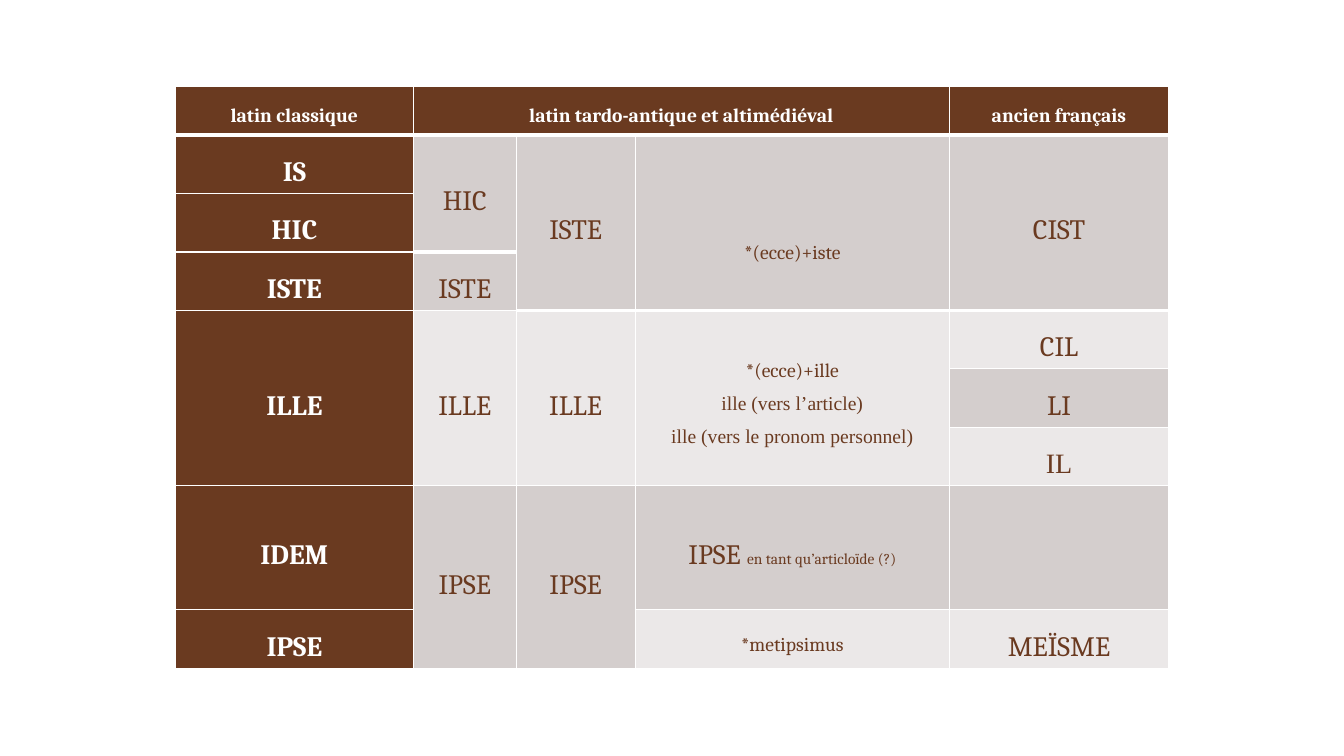
from lxml import etree
from pptx import Presentation
from pptx.dml.color import RGBColor
from pptx.enum.text import MSO_ANCHOR, PP_ALIGN
from pptx.oxml.ns import qn
from pptx.util import Inches, Pt

CENTER = PP_ALIGN.CENTER
MIDDLE = MSO_ANCHOR.MIDDLE

BROWN = RGBColor(0x6A, 0x3A, 0x20)
TAUPE = RGBColor(0xD4, 0xCE, 0xCD)
PALE = RGBColor(0xEB, 0xE8, 0xE8)
WHITE = RGBColor(0xFF, 0xFF, 0xFF)

SERIF = "Cambria"
ROMAN = "Times New Roman"
LARGE, MEDIUM, SMALL = 20, 14, 11

SLIDE_WIDTH, SLIDE_HEIGHT = 13.33, 7.5
TABLE_LEFT, TABLE_TOP = 1.74, 0.86
COLUMN_WIDTHS = [2.36, 1.02, 1.18, 3.12, 2.17]
ROW_HEIGHTS = [0.48] + [0.58] * 6 + [1.23, 0.58]
ECCE_ISTE_DROP = 0.49

HEADINGS = [(0, 1, "latin classique"),
            (1, 3, "latin tardo-antique et altimédiéval"),
            (4, 1, "ancien français")]

CLASSICAL = [(1, 1, "IS"), (2, 1, "HIC"), (3, 1, "ISTE"),
             (4, 3, "ILLE"), (7, 1, "IDEM"), (8, 1, "IPSE")]

# row, column, row span, fill, paragraphs of (text, size, font) runs
REFLEXES = [
    (1, 1, 2, TAUPE, [[("HIC", LARGE, SERIF)]]),
    (3, 1, 1, TAUPE, [[("ISTE", LARGE, SERIF)]]),
    (4, 1, 3, PALE, [[("ILLE", LARGE, SERIF)]]),
    (7, 1, 2, TAUPE, [[("IPSE", LARGE, SERIF)]]),
    (1, 2, 3, TAUPE, [[("ISTE", LARGE, SERIF)]]),
    (4, 2, 3, PALE, [[("ILLE", LARGE, SERIF)]]),
    (7, 2, 2, TAUPE, [[("IPSE", LARGE, SERIF)]]),
    (4, 3, 3, PALE, [[("*(ecce)+ille", MEDIUM, SERIF)],
                     [("ille (vers l’article)", MEDIUM, ROMAN)],
                     [("ille (vers le pronom personnel)", MEDIUM, ROMAN)]]),
    (7, 3, 1, TAUPE, [[("IPSE ", LARGE, SERIF),
                       ("en tant qu’articloïde (?)", SMALL, SERIF)]]),
    (8, 3, 1, PALE, [[("*metipsimus", MEDIUM, SERIF)]]),
    (1, 4, 3, TAUPE, [[("CIST", LARGE, SERIF)]]),
    (4, 4, 1, PALE, [[("CIL", LARGE, SERIF)]]),
    (5, 4, 1, TAUPE, [[("LI", LARGE, SERIF)]]),
    (6, 4, 1, PALE, [[("IL", LARGE, ROMAN)]]),
    (7, 4, 1, TAUPE, []),
    (8, 4, 1, PALE, [[("MEÏSME", LARGE, SERIF)]]),
]


def add_border(cell, side, points):
    properties = cell._tc.get_or_add_tcPr()
    line = etree.SubElement(properties, qn(f"a:ln{side}"), w=str(Pt(points)))
    fill = etree.SubElement(line, qn("a:solidFill"))
    etree.SubElement(fill, qn("a:srgbClr"), val=str(WHITE))


def style_region(table, row, column, height, width, fill):
    last_row, last_column = row + height - 1, column + width - 1
    for r in range(row, last_row + 1):
        for c in range(column, last_column + 1):
            cell = table.cell(r, c)
            edges = [("L", c == column, 1),
                     ("R", c == last_column, 1),
                     ("T", r == row, 3 if r == 1 else 1),
                     ("B", r == last_row, 3 if r == 0 else 1)]
            for side, is_outer, points in edges:
                if is_outer:
                    add_border(cell, side, points)
            cell.fill.solid()
            cell.fill.fore_color.rgb = fill


def write_paragraphs(cell, paragraphs, color, bold):
    frame = cell.text_frame
    for index, runs in enumerate(paragraphs):
        paragraph = frame.add_paragraph() if index else frame.paragraphs[0]
        paragraph.alignment = CENTER
        paragraph.line_spacing = 1.5
        for text, size, font in runs:
            run = paragraph.add_run()
            run.text = text
            run.font.size = Pt(size)
            run.font.name = font
            run.font.bold = bold
            run.font.color.rgb = color


def fill_region(table, row, column, height, width, fill, paragraphs,
                color=BROWN, bold=False, drop=0):
    style_region(table, row, column, height, width, fill)
    cell = table.cell(row, column)
    if height * width > 1:
        cell.merge(table.cell(row + height - 1, column + width - 1))
    cell.vertical_anchor = MIDDLE
    cell.margin_left = cell.margin_right = Inches(0.07)
    cell.margin_top = Inches(drop)
    cell.margin_bottom = 0
    write_paragraphs(cell, paragraphs, color, bold)


def add_grid(slide):
    table = slide.shapes.add_table(
        len(ROW_HEIGHTS), len(COLUMN_WIDTHS),
        Inches(TABLE_LEFT), Inches(TABLE_TOP),
        Inches(sum(COLUMN_WIDTHS)), Inches(sum(ROW_HEIGHTS))).table
    table.first_row = False
    table.horz_banding = False
    for column, width in zip(table.columns, COLUMN_WIDTHS):
        column.width = Inches(width)
    for row, height in zip(table.rows, ROW_HEIGHTS):
        row.height = Inches(height)
    return table


def main():
    deck = Presentation()
    deck.slide_width = Inches(SLIDE_WIDTH)
    deck.slide_height = Inches(SLIDE_HEIGHT)
    slide = deck.slides.add_slide(deck.slide_layouts[6])
    table = add_grid(slide)
    for column, width, heading in HEADINGS:
        fill_region(table, 0, column, 1, width, BROWN,
                    [[(heading, MEDIUM, SERIF)]], WHITE, True)
    for row, height, pronoun in CLASSICAL:
        fill_region(table, row, 0, height, 1, BROWN,
                    [[(pronoun, LARGE, SERIF)]], WHITE, True)
    for row, column, height, fill, paragraphs in REFLEXES:
        fill_region(table, row, column, height, 1, fill, paragraphs)
    fill_region(table, 1, 3, 3, 1, TAUPE,
                [[("*(ecce)+iste", MEDIUM, SERIF)]], drop=ECCE_ISTE_DROP)
    deck.save("out.pptx")


if __name__ == "__main__":
    main()
